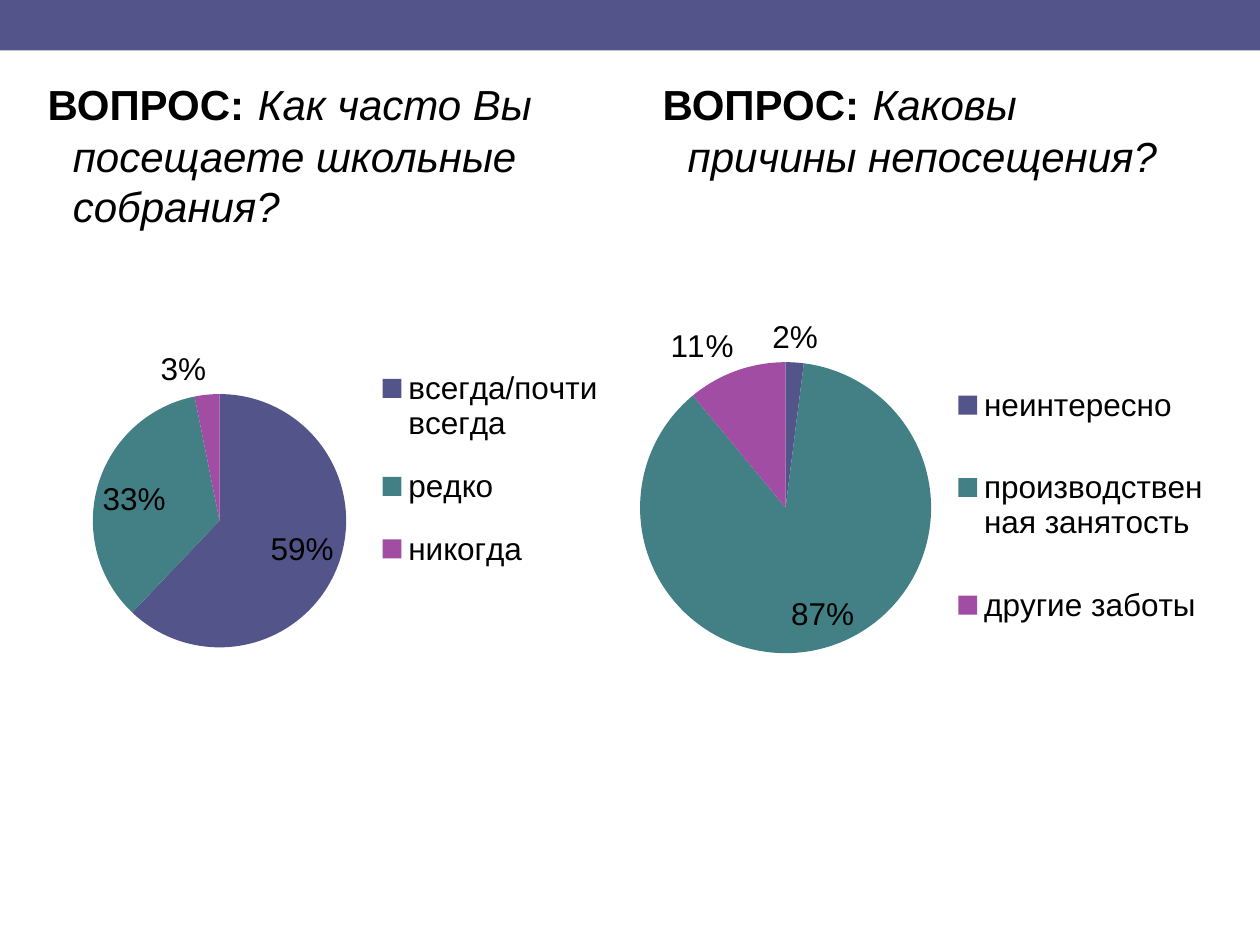
from lxml import etree
from pptx import Presentation
from pptx.chart.data import CategoryChartData
from pptx.dml.color import RGBColor
from pptx.enum.chart import XL_CHART_TYPE, XL_LABEL_POSITION, XL_LEGEND_POSITION
from pptx.enum.shapes import MSO_SHAPE
from pptx.oxml.ns import qn
from pptx.util import Inches, Pt

RECT = MSO_SHAPE.RECTANGLE
PIE = XL_CHART_TYPE.PIE
RIGHT = XL_LEGEND_POSITION.RIGHT
BEST = XL_LABEL_POSITION.BEST_FIT


def color(code):
    return RGBColor.from_string(code)


class Deck:
    face = "Arial"
    ink = "000000"
    hues = ("53548A", "438086", "A04DA3")

    def __init__(self, slide):
        self.slide = slide

    def font(self, font, size):
        font.name = self.face
        font.size = Pt(size)
        font.color.rgb = color(self.ink)

    def band(self, box):
        shape = self.slide.shapes.add_shape(RECT, *map(Inches, box))
        shape.shadow.inherit = False
        shape.fill.solid()
        shape.fill.fore_color.rgb = color(self.hues[0])
        shape.line.fill.background()

    def ask(self, box, query):
        frame = self.slide.shapes.add_textbox(*map(Inches, box)).text_frame
        frame.word_wrap = True
        para = frame.paragraphs[0]
        para.space_before = Pt(5)
        # Hanging indent
        props = para._p.get_or_add_pPr()
        props.set("marL", str(Inches(0.2)))
        props.set("indent", str(Inches(-0.2)))
        parts = (("ВОПРОС:", 24, True, False), (" ", 28, False, False),
                 (query, 24, False, True))
        for text, size, bold, slant in parts:
            run = para.add_run()
            run.text = text
            self.font(run.font, size)
            run.font.bold = bold
            run.font.italic = slant

    def place(self, node, box, inner=False):
        """Fix the layout of a chart part, in fractions of the chart."""
        layout = node.find(qn("c:layout"))
        if layout is None:
            layout = etree.Element(qn("c:layout"))
            # The layout follows legendPos in a legend, and leads a plot area
            node.insert(0 if inner else 1, layout)
        manual = etree.SubElement(layout, qn("c:manualLayout"))
        rules = [("layoutTarget", "inner")] if inner else []
        rules += [("xMode", "edge"), ("yMode", "edge")]
        rules += zip("xywh", map(str, box))
        for tag, val in rules:
            etree.SubElement(manual, qn("c:" + tag)).set("val", val)

    def pie(self, box, names, vals, plot, key):
        data = CategoryChartData(number_format="0%")
        data.categories = names
        data.add_series("Series 1", vals)
        frame = self.slide.shapes.add_chart(PIE, *map(Inches, box), data)
        chart = frame.chart
        chart.has_title = False
        self.font(chart.font, 18)
        # Legend
        chart.has_legend = True
        legend = chart.legend
        legend.position = RIGHT
        legend.include_in_layout = False
        self.font(legend.font, 18)
        self.place(legend._element, key)
        # Slices and labels
        area = chart.plots[0]
        area.vary_by_categories = True
        for i, hue in enumerate(self.hues):
            fill = area.series[0].points[i].format.fill
            fill.solid()
            fill.fore_color.rgb = color(hue)
        area.has_data_labels = True
        labels = area.data_labels
        labels.show_value = True
        labels.show_percentage = False
        labels.number_format = "0%"
        labels.number_format_is_linked = False
        labels.position = BEST
        self.font(labels.font, 18)
        self.place(chart._chartSpace.find(".//" + qn("c:plotArea")), plot, True)


def main():
    prs = Presentation()
    prs.slide_width, prs.slide_height = Inches(10), Inches(7.5)
    deck = Deck(prs.slides.add_slide(prs.slide_layouts[6]))

    # Top band
    deck.band((0, 0, 10, 0.4))

    # Questions
    deck.ask((0.28, 0.52, 4.17, 1.5), "Как часто Вы посещаете школьные собрания?")
    deck.ask((5.16, 0.52, 4.42, 1.02), "Каковы причины непосещения?")

    # Answers
    deck.pie((0.28, 2.33, 4.57, 3.31),
             ("всегда/почти всегда", "редко", "никогда"), (0.59, 0.33, 0.03),
             (0.1, 0.24, 0.44, 0.61), (0.58, 0.12, 0.42, 0.6))
    deck.pie((5.08, 2.02, 4.62, 4.02),
             ("неинтересно", "производственная занятость", "другие заботы"),
             (0.02, 0.87, 0.11),
             (0, 0.1, 0.5, 0.8), (0.56, 0.17, 0.43, 0.65))

    prs.save("out.pptx")


if __name__ == "__main__":
    main()
